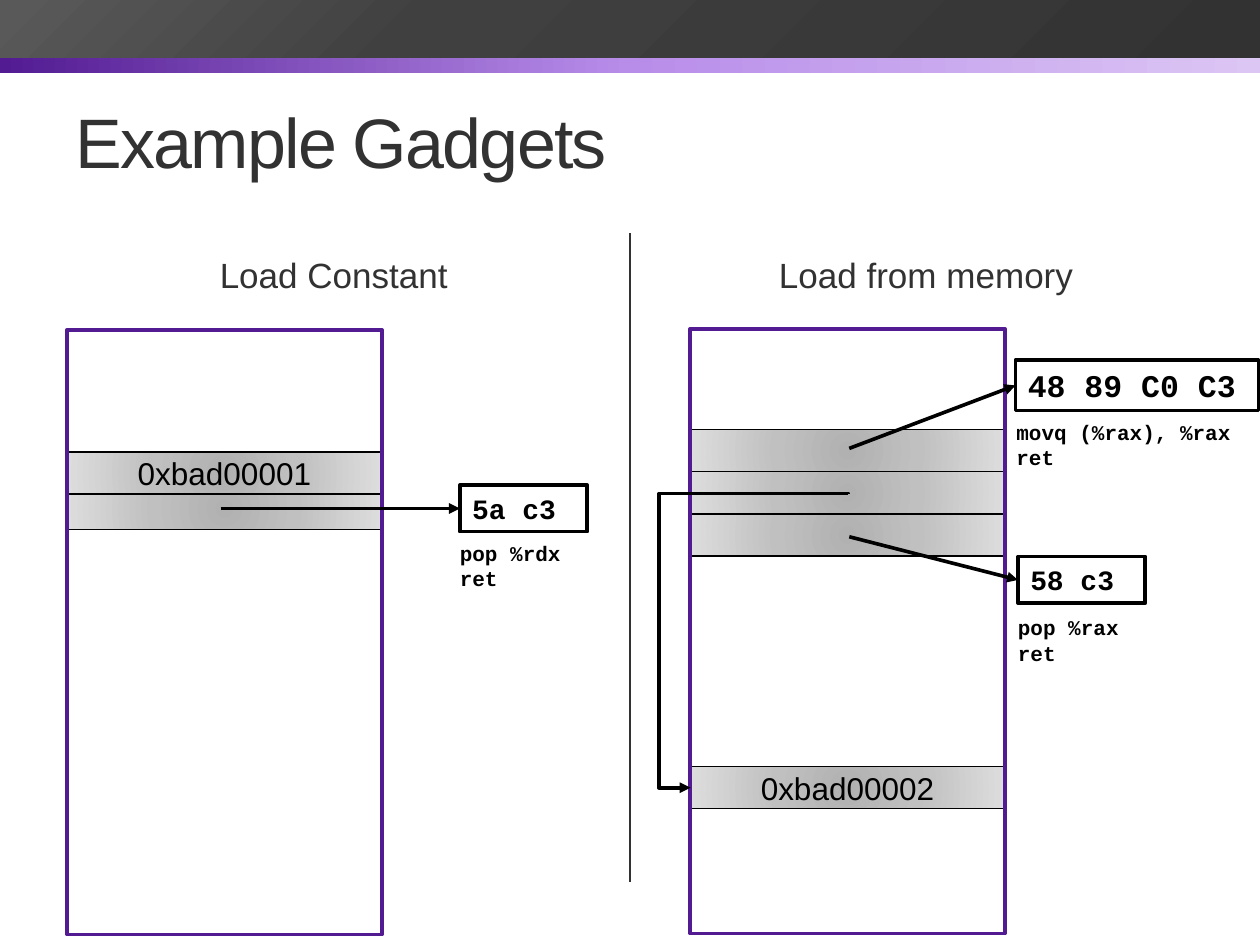
from lxml import etree
from pptx import Presentation
from pptx.dml.color import RGBColor
from pptx.enum.shapes import MSO_CONNECTOR, MSO_SHAPE
from pptx.enum.text import MSO_ANCHOR, MSO_AUTO_SIZE, PP_ALIGN
from pptx.oxml.ns import qn
from pptx.util import Cm, Pt

RECTANGLE = MSO_SHAPE.RECTANGLE
STRAIGHT, ELBOW = MSO_CONNECTOR.STRAIGHT, MSO_CONNECTOR.ELBOW
TOP, MIDDLE = MSO_ANCHOR.TOP, MSO_ANCHOR.MIDDLE
LEFT, CENTER = PP_ALIGN.LEFT, PP_ALIGN.CENTER
GROW = MSO_AUTO_SIZE.SHAPE_TO_FIT_TEXT

SANS, MONO = "Arial", "Courier New"
BLACK, WHITE, CHARCOAL, PURPLE = "000000", "FFFFFF", "323232", "521B92"
ACCENT_STOPS = [(0, PURPLE), (50, "B88DEA"), (100, "DCC6F4")]
HEADER_STOPS = [(0, CHARCOAL), (66, "404040"), (99, "595959")]
CELL_STOPS = [(0, "B1B1B1"), (45, "C0C0C0"), (100, "DDDDDD")]
STACK_WIDTH, STACK_HEIGHT, CELL_HEIGHT = 6.35, 12.19, 0.85
HEAVY = 2.08


def color(hex_value):
    return RGBColor.from_string(hex_value)


def write_text(shape, lines, font, align=LEFT, anchor=TOP, **frame_format):
    """Write one paragraph per line; font is a dict of font values."""
    frame = shape.text_frame
    for name, value in {"word_wrap": True, "vertical_anchor": anchor, **frame_format}.items():
        setattr(frame, name, value)
    for index, line in enumerate(lines):
        paragraph = frame.add_paragraph() if index else frame.paragraphs[0]
        paragraph.alignment = align
        run = paragraph.add_run()
        run.text = line
        for name, value in font.items():
            if name == "color":
                run.font.color.rgb = color(value)
            else:
                setattr(run.font, name, value)
    return frame


def font_of(name, size, hex_value=BLACK, bold=False):
    return {"name": name, "size": Pt(size), "color": hex_value, "bold": bold}


def add_text(slide, box, lines, font, **text_format):
    textbox = slide.shapes.add_textbox(*map(Cm, box))
    return write_text(textbox, lines, font, **text_format)


def add_box(slide, box, fill=None, line=None, width=HEAVY):
    shape = slide.shapes.add_shape(RECTANGLE, *map(Cm, box))
    shape.shadow.inherit = False
    if fill:
        shape.fill.solid()
        shape.fill.fore_color.rgb = color(fill)
    else:
        shape.fill.background()
    if line:
        shape.line.color.rgb = color(line)
        shape.line.width = Pt(width)
    else:
        shape.line.fill.background()
    return shape


def set_gradient(shape, stops, angle=None):
    """Fill with a linear gradient at the angle, or a circular one without it."""
    gradient = etree.Element(qn("a:gradFill"), rotWithShape="1")
    stop_list = etree.SubElement(gradient, qn("a:gsLst"))
    for position, hex_value in stops:
        stop = etree.SubElement(stop_list, qn("a:gs"), pos=str(position * 1000))
        etree.SubElement(stop, qn("a:srgbClr"), val=hex_value)
    if angle is None:
        circle = etree.SubElement(gradient, qn("a:path"), path="circle")
        etree.SubElement(circle, qn("a:fillToRect"), dict.fromkeys("ltrb", "100000"))
    else:
        etree.SubElement(gradient, qn("a:lin"), ang=str(angle * 60000), scaled="0")
    properties = shape.element.spPr
    properties.replace(properties.find(qn("a:noFill")), gradient)


def add_line(slide, start, end, kind=STRAIGHT, hex_value=BLACK, width=HEAVY, arrow=True):
    line = slide.shapes.add_connector(kind, *map(Cm, (*start, *end)))
    line.line.color.rgb = color(hex_value)
    line.line.width = Pt(width)
    if arrow:
        etree.SubElement(line.line._get_or_add_ln(), qn("a:tailEnd"), type="triangle")
    etree.SubElement(line.element.spPr, qn("a:effectLst"))
    return line


def add_bent_arrow(slide, start, end, adjustments):
    """Elbow turned by 90 degrees, leaving the stack on its left side."""
    line = add_line(slide, start, end, ELBOW)
    properties = line.element.spPr
    properties.find(qn("a:xfrm")).set("rot", str(90 * 60000))
    geometry = properties.find(qn("a:prstGeom"))
    geometry.set("prst", "bentConnector4")
    guides = geometry.find(qn("a:avLst"))
    for index, value in enumerate(adjustments, 1):
        etree.SubElement(guides, qn("a:gd"), name=f"adj{index}", fmla=f"val {value}")


def add_cell(slide, left, top, value=None):
    cell = add_box(slide, (left, top, STACK_WIDTH, CELL_HEIGHT), line=BLACK, width=0.75)
    set_gradient(cell, CELL_STOPS)
    if value:
        write_text(cell, [value], font_of(SANS, 18), align=CENTER, anchor=MIDDLE)


def add_stack(slide, left, top, cells):
    for cell_top, value in cells:
        add_cell(slide, left, cell_top, value)
    add_box(slide, (left, top, STACK_WIDTH, STACK_HEIGHT), line=PURPLE)


def add_gadget(slide, box, code, size, label_corner, instructions, arrow_start):
    """Byte code box, its instructions below, and the arrow from the stack."""
    gadget = add_box(slide, box, fill=WHITE, line=BLACK)
    write_text(gadget, [code], font_of(MONO, size, bold=True), word_wrap=False, auto_size=GROW)
    add_text(slide, (*label_corner, box[2], 1.27), instructions,
             font_of(MONO, 12, bold=True), word_wrap=False, auto_size=GROW)
    left, top, _, height = box
    arrow = add_line(slide, arrow_start, (left, top + height / 2))
    arrow.end_connect(gadget, 1)


def main():
    deck = Presentation()
    deck.slide_width, deck.slide_height = Cm(25.4), Cm(19.05)
    slide = deck.slides.add_slide(deck.slide_layouts[6])

    # Header bands and the divider between the two panels
    set_gradient(add_box(slide, (0, 0.61, 25.4, 0.86)), ACCENT_STOPS, 0)
    set_gradient(add_box(slide, (0, 0, 25.4, 1.17)), HEADER_STOPS, 225)
    add_line(slide, (12.7, 4.7), (12.7, 17.78), hex_value=CHARCOAL, width=1.5, arrow=False)

    # Title and panel headings
    title = add_text(slide, (1.27, 1.47, 22.86, 2.74), ["Example Gadgets"],
                     font_of(SANS, 40, CHARCOAL), anchor=MIDDLE)
    title.paragraphs[0].runs[0].font._element.set("spc", "-100")
    for left, heading in ((1.27, "Load Constant"), (13.21, "Load from memory")):
        frame = add_text(slide, (left, 4.65, 10.92, 1.78), [heading],
                         font_of(SANS, 20, CHARCOAL), align=CENTER, anchor=MIDDLE)
        frame.paragraphs[0].space_before = Pt(4)

    # Left panel: load a constant
    add_stack(slide, 1.35, 6.65, [(9.83, None), (9.11, "0xbad00001")])
    add_gadget(slide, (9.27, 9.78, 2.57, 0.94), "5a c3", 16,
               (9.02, 10.77), ["pop %rdx", "ret"], (4.45, 10.25))

    # Right panel: load from memory
    addresses = [(8.66 + row * CELL_HEIGHT, None) for row in range(3)]
    add_stack(slide, 13.91, 6.63, [(15.45, "0xbad00002"), *addresses])
    add_gadget(slide, (20.52, 11.22, 2.57, 0.94), "58 c3", 16,
               (20.27, 12.27), ["pop %rax", "ret"], (17.12, 10.82))
    add_gadget(slide, (20.47, 7.26, 4.9, 1.02), "48 89 C0 C3", 18,
               (20.24, 8.33), ["movq (%rax), %rax", "ret"], (17.12, 9.04))
    add_bent_arrow(slide, (12.55, 11.33), (18.47, 14.51), (-200, 120000))

    deck.save("out.pptx")


if __name__ == "__main__":
    main()
